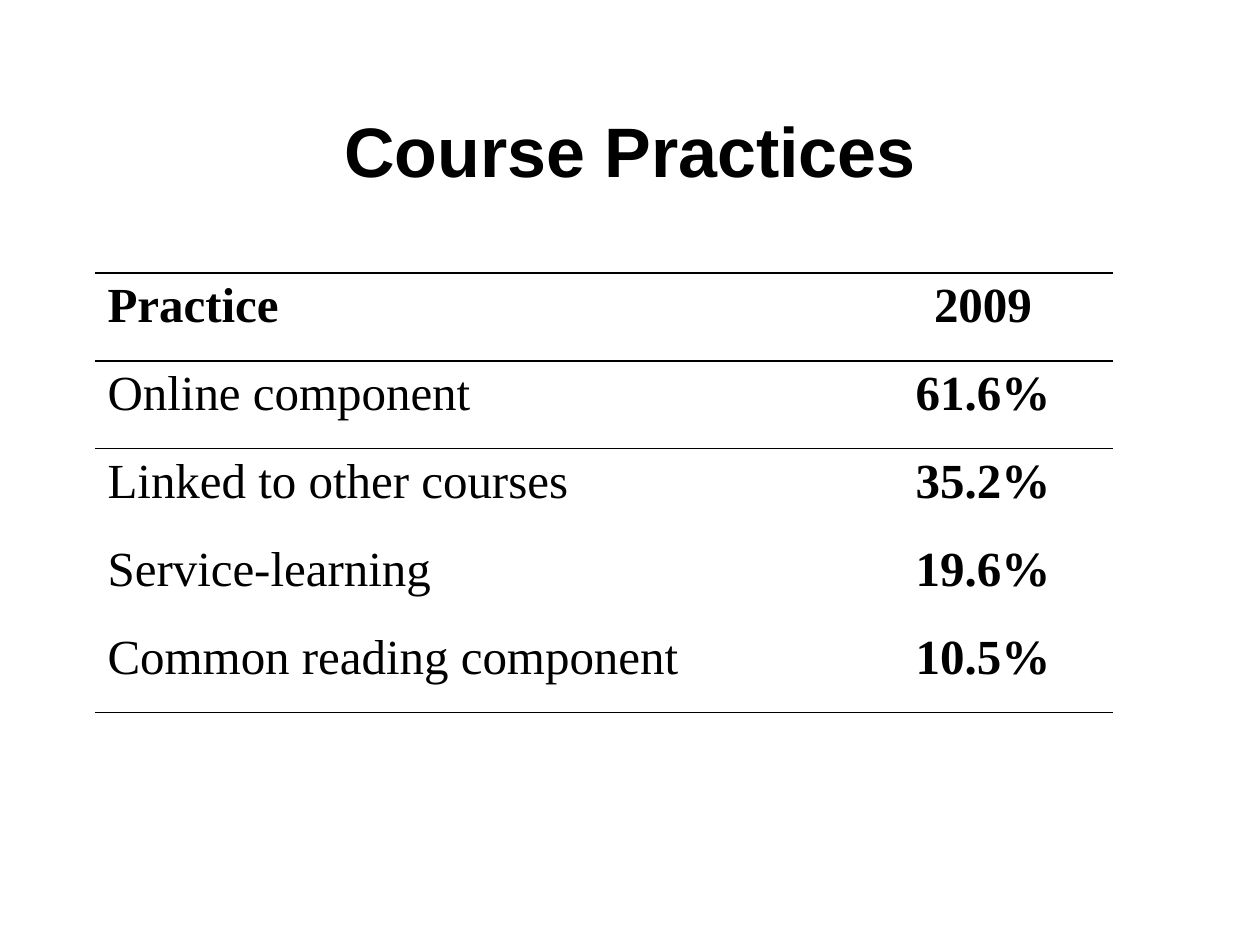
"""Build the Course Practices slide: a title over a ruled table."""
from dataclasses import dataclass

import pptx
import pptx.dml.color
import pptx.enum.text
import pptx.oxml
import pptx.oxml.ns
import pptx.util

EMU_PER_PX = 914400 / 126
BLACK = "000000"
LEFT = pptx.enum.text.PP_ALIGN.LEFT
CENTER = pptx.enum.text.PP_ALIGN.CENTER


@dataclass(frozen=True)
class Row:
    """One table row, with the width in points of the rule below it."""

    practice: str
    share: str
    rule_pt: float = 0
    header: bool = False


TOP_RULE_PT = 1
COLUMN_WIDTHS = (758, 260)
ROW_HEIGHT = 88
ROWS = (
    Row("Practice", "2009", 1, header=True),
    Row("Online component", "61.6%", 0.5),
    Row("Linked to other courses", "35.2%"),
    Row("Service-learning", "19.6%"),
    Row("Common reading component", "10.5%", 1),
)


def px(n: int) -> int:
    """Convert px to EMU."""
    return round(n * EMU_PER_PX)


def rgb(color: str) -> pptx.dml.color.RGBColor:
    """Turn a hex string into a colour."""
    return pptx.dml.color.RGBColor.from_string(color)


def format_paragraph(p, font: str, size: int, bold: bool, align) -> None:
    """Set the alignment and font of a paragraph."""
    p.alignment = align
    p.font.name = font
    p.font.size = pptx.util.Pt(size)
    p.font.bold = bold
    p.font.color.rgb = rgb(BLACK)


def set_borders(cell, top: float, bottom: float) -> None:
    """Rule a cell above and below, leaving its sides open."""
    tc_pr = cell._tc.get_or_add_tcPr()
    widths = {"lnL": 0, "lnR": 0, "lnT": top, "lnB": bottom}
    for i, (tag, width) in enumerate(widths.items()):
        paint = f'<a:solidFill><a:srgbClr val="{BLACK}"/></a:solidFill>' if width else "<a:noFill/>"
        ln = pptx.oxml.parse_xml(
            f'<a:{tag} {pptx.oxml.ns.nsdecls("a")} w="{pptx.util.Pt(width)}">{paint}</a:{tag}>'
        )
        tc_pr.insert(i, ln)


def add_title(s, text: str) -> None:
    """Place and format the title placeholder."""
    sp = s.shapes.title
    sp.left, sp.top, sp.width, sp.height = map(px, (95, 95, 1070, 157))
    tf = sp.text_frame
    tf.text = text
    tf.vertical_anchor = pptx.enum.text.MSO_ANCHOR.TOP
    tf.margin_top = px(13)
    format_paragraph(tf.paragraphs[0], "Arial", 40, True, CENTER)


def add_practice_table(s, rows: tuple[Row, ...]) -> None:
    """Draw the practices and their shares as a table."""
    frame = s.shapes.add_table(
        len(rows), len(COLUMN_WIDTHS), px(95), px(273),
        px(sum(COLUMN_WIDTHS)), px(ROW_HEIGHT * len(rows)),
    )
    table = frame.table
    table.first_row = table.horz_banding = False
    for column, width in zip(table.columns, COLUMN_WIDTHS):
        column.width = px(width)
    top = TOP_RULE_PT
    for i, row in enumerate(rows):
        table.rows[i].height = px(ROW_HEIGHT)
        cells = ((row.practice, row.header, LEFT), (row.share, True, CENTER))
        for j, (text, bold, align) in enumerate(cells):
            cell = table.cell(i, j)
            cell.text = text
            cell.fill.background()
            set_borders(cell, top, row.rule_pt)
            format_paragraph(cell.text_frame.paragraphs[0], "Times New Roman", 28, bold, align)
        top = row.rule_pt


def main() -> None:
    """Build and save the slide."""
    prs = pptx.Presentation()
    prs.slide_width, prs.slide_height = px(1260), px(945)
    s = prs.slides.add_slide(prs.slide_layouts[5])
    add_title(s, "Course Practices")
    add_practice_table(s, ROWS)
    prs.save("out.pptx")


if __name__ == "__main__":
    main()
